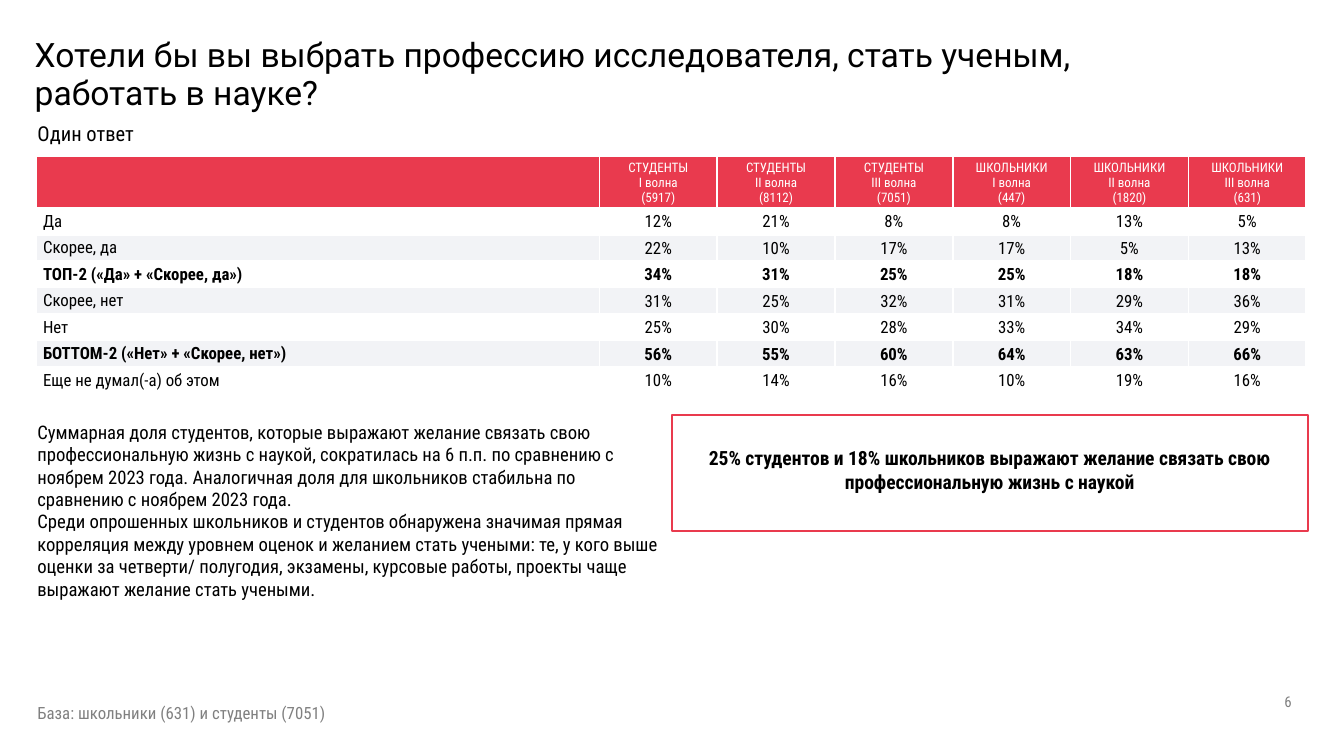
from dataclasses import dataclass

from lxml.etree import SubElement
from pptx import Presentation
from pptx.dml.color import RGBColor
from pptx.enum.shapes import MSO_SHAPE
from pptx.enum.text import MSO_ANCHOR, PP_ALIGN
from pptx.oxml.ns import qn
from pptx.util import Inches, Pt


@dataclass(frozen=True)
class Theme:
    accent: str = "E93A4E"
    band: str = "F2F3F6"
    black: str = "000000"
    gray: str = "808080"
    white: str = "FFFFFF"
    title_font: str = "Roboto"
    body_font: str = "Roboto Condensed"
    title_size: float = 18
    subtitle_size: float = 11
    callout_size: float = 10.5
    body_size: float = 10
    table_size: float = 9
    header_size: float = 7
    page_size: float = 8


THEME = Theme()
WAVES = ("I волна", "II волна", "III волна")
GROUPS = {
    "СТУДЕНТЫ": (5917, 8112, 7051),
    "ШКОЛЬНИКИ": (447, 1820, 631),
}
ANSWERS = {
    "Да": (12, 21, 8, 8, 13, 5),
    "Скорее, да": (22, 10, 17, 17, 5, 13),
    "ТОП-2 («Да» + «Скорее, да»)": (34, 31, 25, 25, 18, 18),
    "Скорее, нет": (31, 25, 32, 31, 29, 36),
    "Нет": (25, 30, 28, 33, 34, 29),
    "БОТТОМ-2 («Нет» + «Скорее, нет»)": (56, 55, 60, 64, 63, 66),
    "Еще не думал(-а) об этом": (10, 14, 16, 10, 19, 16),
}
FINDINGS = (
    "Суммарная доля студентов, которые выражают желание связать свою "
    "профессиональную жизнь с наукой, сократилась на 6 п.п. по сравнению с "
    "ноябрем 2023 года. Аналогичная доля для школьников стабильна по "
    "сравнению с ноябрем 2023 года.",
    "Среди опрошенных школьников и студентов обнаружена значимая прямая "
    "корреляция между уровнем оценок и желанием стать учеными: те, у кого выше "
    "оценки за четверти/ полугодия, экзамены, курсовые работы, проекты чаще "
    "выражают желание стать учеными.",
)


def write_text(frame, *paragraphs, size, color=THEME.black, font=THEME.body_font,
               bold=False, align=PP_ALIGN.LEFT, spacing=None):
    """Fill a text frame; a newline inside a paragraph becomes a line break."""
    for index, text in enumerate(paragraphs):
        paragraph = frame.add_paragraph() if index else frame.paragraphs[0]
        paragraph.text = text
        paragraph.alignment = align
        paragraph.line_spacing = spacing
        for run in paragraph.runs:
            run.font.name = font
            run.font.size = Pt(size)
            run.font.bold = bold
            run.font.color.rgb = RGBColor.from_string(color)


def set_margins(target, left, top, right, bottom):
    target.margin_left, target.margin_top = Inches(left), Inches(top)
    target.margin_right, target.margin_bottom = Inches(right), Inches(bottom)


def add_borders(cell, color, width):
    properties = cell._tc.get_or_add_tcPr()
    for side in ("a:lnL", "a:lnR", "a:lnT", "a:lnB"):
        line = SubElement(properties, qn(side), w=str(Pt(width)))
        fill = SubElement(line, qn("a:solidFill"))
        SubElement(fill, qn("a:srgbClr"), val=color)


class SlideBuilder:
    def __init__(self, slide, theme):
        self.slide = slide
        self.theme = theme

    def text_box(self, left, top, width, height, *paragraphs,
                 anchor=MSO_ANCHOR.TOP, margins=(0.1, 0.05, 0.1, 0.05), **style):
        box = self.slide.shapes.add_textbox(
            Inches(left), Inches(top), Inches(width), Inches(height))
        frame = box.text_frame
        frame.word_wrap = True
        frame.vertical_anchor = anchor
        set_margins(frame, *margins)
        write_text(frame, *paragraphs, **style)

    def outline(self, left, top, width, height):
        shape = self.slide.shapes.add_shape(
            MSO_SHAPE.RECTANGLE, Inches(left), Inches(top), Inches(width), Inches(height))
        shape.shadow.inherit = False
        shape.fill.background()
        shape.line.color.rgb = RGBColor.from_string(self.theme.accent)
        shape.line.width = Pt(1)

    def cell(self, cell, *paragraphs, fill=None, margins=(0.01, 0.01, 0.01, 0), **style):
        cell.vertical_anchor = MSO_ANCHOR.MIDDLE
        set_margins(cell, *margins)
        add_borders(cell, self.theme.white, 1)
        if fill:
            cell.fill.solid()
            cell.fill.fore_color.rgb = RGBColor.from_string(fill)
        else:
            cell.fill.background()
        write_text(cell.text_frame, *paragraphs, **style)

    def answer_table(self, left, top, width, height, label_width, header_height):
        """Share the space beside the labels and below the header equally."""
        theme = self.theme
        headers = [("",)] + [
            (group, f"{wave}\n({base})")
            for group, bases in GROUPS.items() for wave, base in zip(WAVES, bases)]
        value_count = len(headers) - 1
        widths = [label_width] + [(width - label_width) / value_count] * value_count
        heights = [header_height] + [(height - header_height) / len(ANSWERS)] * len(ANSWERS)
        table = self.slide.shapes.add_table(
            len(heights), len(widths), Inches(left), Inches(top),
            Inches(width), Inches(height)).table
        table.horz_banding = False
        for column, column_width in zip(table.columns, widths):
            column.width = Inches(column_width)
        for row, row_height in zip(table.rows, heights):
            row.height = Inches(row_height)

        for column, header in enumerate(headers):
            self.cell(table.cell(0, column), *header, fill=theme.accent,
                      size=theme.header_size, color=theme.white, align=PP_ALIGN.CENTER)
        for row, (answer, shares) in enumerate(ANSWERS.items(), start=1):
            style = {"size": theme.table_size, "bold": "-2 (" in answer,
                     "fill": None if row % 2 else theme.band}
            self.cell(table.cell(row, 0), answer, margins=(0.05, 0, 0, 0), **style)
            for column, share in enumerate(shares, start=1):
                self.cell(table.cell(row, column), f"{share}%",
                          align=PP_ALIGN.CENTER, **style)


def main():
    presentation = Presentation()
    presentation.slide_width = Inches(10)
    presentation.slide_height = Inches(10) * 9 // 16
    slide = presentation.slides.add_slide(presentation.slide_layouts[6])
    builder = SlideBuilder(slide, THEME)

    builder.outline(5, 3.09, 4.73, 0.86)
    builder.text_box(
        0.16, 0.15, 8.62, 1.09,
        "Хотели бы вы выбрать профессию исследователя, стать ученым, работать в науке?",
        anchor=MSO_ANCHOR.MIDDLE, margins=(0.1, 0.05, 0.1, 0.33),
        size=THEME.title_size, font=THEME.title_font, spacing=Pt(20))
    builder.text_box(7.46, 5.07, 2.25, 0.3, "6", anchor=MSO_ANCHOR.MIDDLE,
                     size=THEME.page_size, color=THEME.gray, align=PP_ALIGN.RIGHT)
    builder.text_box(0.18, 0.8, 7.71, 0.7, "Один ответ", margins=(0.1,) * 4,
                     size=THEME.subtitle_size, spacing=1.02)
    builder.answer_table(0.27, 1.16, 9.45, 1.77, label_width=4.19, header_height=0.39)
    builder.text_box(
        5, 3.27, 4.73, 0.45,
        "25% студентов и 18% школьников выражают желание связать свою "
        "профессиональную жизнь с наукой",
        size=THEME.callout_size, bold=True, align=PP_ALIGN.CENTER)
    builder.text_box(0.18, 3.08, 4.82, 1.45, *FINDINGS, size=THEME.body_size)
    builder.text_box(0.18, 5.18, 4.82, 0.25, "База: школьники (631) и студенты (7051)",
                     size=THEME.table_size, color=THEME.gray)
    presentation.save("out.pptx")


if __name__ == "__main__":
    main()
